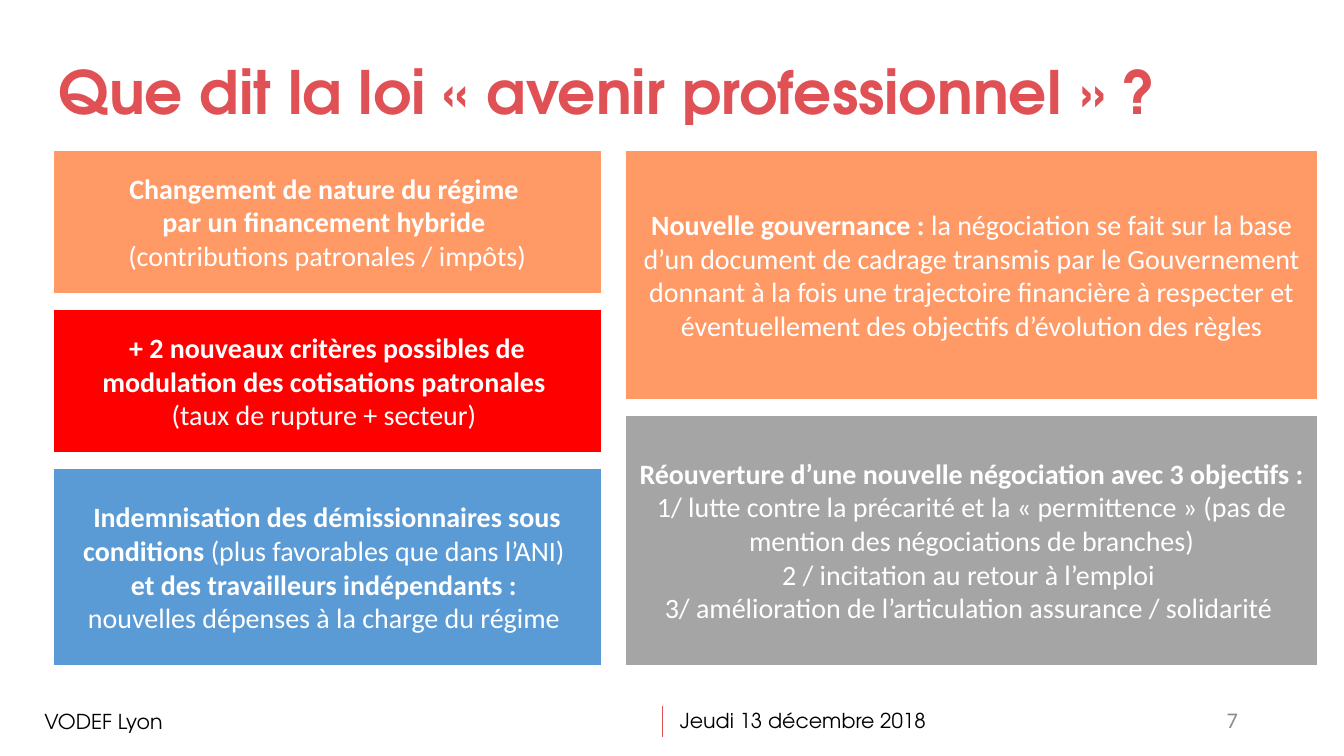
"""Build the slide on the "avenir professionnel" law."""
from dataclasses import dataclass
from typing import Any, NamedTuple

from lxml import etree
from pptx import Presentation
from pptx import util as u
from pptx.dml.color import RGBColor
from pptx.enum import shapes, text
from pptx.oxml.ns import qn


@dataclass(frozen=True)
class Theme:
    accent: str = "DF5155"
    orange: str = "FF9966"
    red: str = "FF0000"
    blue: str = "5B9BD5"
    grey: str = "A5A5A5"
    white: str = "FFFFFF"
    black: str = "000000"
    muted: str = "8C8C8C"
    heading_font: str = "TeX Gyre Adventor"
    body_font: str = "Calibri"
    title_size: int = 32
    card_size: int = 15
    footer_size: int = 11
    number_size: int = 12


class Area(NamedTuple):
    left: float
    top: float
    width: float
    height: float


class Span(NamedTuple):
    text: str
    bold: bool = False


class Style(NamedTuple):
    font: str
    size: int
    color: str
    align: Any = text.PP_ALIGN.LEFT


@dataclass(frozen=True)
class Card:
    height: float
    fill: str
    paras: list[list[Span]]


@dataclass(frozen=True)
class Column:
    left: float
    width: float
    cards: list[Card]


@dataclass(frozen=True)
class Label:
    area: Area
    wording: str
    style: Style
    frame: dict[str, Any]


THEME = Theme()
CARDS_TOP = 2.82
CARD_GAP = 0.27

CARD_STYLE = Style(THEME.body_font, THEME.card_size, THEME.white, text.PP_ALIGN.CENTER)
TITLE_STYLE = Style(THEME.heading_font, THEME.title_size, THEME.accent)
FOOTER_STYLE = Style(THEME.heading_font, THEME.footer_size, THEME.black)
NUMBER_STYLE = Style(THEME.body_font, THEME.number_size, THEME.muted, text.PP_ALIGN.RIGHT)

MIDDLE = {"word_wrap": True, "vertical_anchor": text.MSO_ANCHOR.MIDDLE,
          "auto_size": text.MSO_AUTO_SIZE.NONE}
FOOTER = {"word_wrap": True, "vertical_anchor": text.MSO_ANCHOR.TOP,
          "auto_size": text.MSO_AUTO_SIZE.SHAPE_TO_FIT_TEXT,
          "margin_left": u.Cm(0.1), "margin_right": u.Cm(0.1),
          "margin_top": u.Cm(0.1), "margin_bottom": u.Cm(0.1)}

COLUMNS = [
    Column(0.99, 10.39, [
        Card(2.74, THEME.orange, [
            [Span("Changement de nature du régime ", True)],
            [Span("par un financement hybride ", True)],
            [Span("(contributions patronales / impôts)")],
        ]),
        Card(2.74, THEME.red, [
            [Span("+ 2 nouveaux critères possibles de modulation des cotisations patronales ", True)],
            [Span("(taux de rupture + secteur) ")],
        ]),
        Card(3.76, THEME.blue, [
            [Span("Indemnisation des démissionnaires sous conditions", True),
             Span(" (plus favorables que dans l’ANI) ")],
            [Span("et des travailleurs indépendants : ", True)],
            [Span("nouvelles dépenses à la charge du régime ")],
        ]),
    ]),
    Column(11.81, 13.11, [
        Card(4.75, THEME.orange, [
            [Span("Nouvelle gouvernance : ", True),
             Span("la négociation se fait sur la base d’un document de cadrage transmis par le "
                  "Gouvernement donnant à la fois une trajectoire financière à respecter et "
                  "éventuellement des objectifs d’évolution des règles")],
        ]),
        Card(4.75, THEME.grey, [
            [Span("Réouverture d’une nouvelle négociation avec 3 objectifs : ", True)],
            [Span("1/ lutte contre la précarité et la « permittence » "
                  "(pas de mention des négociations de branches)")],
            [Span("2 / incitation au retour à l’emploi ")],
            [Span("3/ amélioration de l’articulation assurance / solidarité ")],
        ]),
    ]),
]

LABELS = [
    Label(Area(0.74, 13.31, 11.66, 0.66), "VODEF Lyon", FOOTER_STYLE, FOOTER),
    Label(Area(12.65, 13.28, 5.31, 0.66), "Jeudi 13 décembre 2018", FOOTER_STYLE,
          {**FOOTER, "margin_left": u.Cm(0.2)}),
    Label(Area(17.93, 13.23, 5.72, 0.76), "7", NUMBER_STYLE, MIDDLE),
]


def apply(target: Any, values: dict[str, Any]) -> None:
    """Set every named attribute on the target."""
    for name, value in values.items():
        setattr(target, name, value)


def lengths(area: Area) -> list[u.Length]:
    """Convert an area to slide lengths."""
    return [u.Cm(value) for value in area]


def write(box: Any, paras: list[list[Span]], style: Style, frame: dict[str, Any]) -> None:
    """Fill a box with styled paragraphs."""
    apply(box.text_frame, frame)
    for index, spans in enumerate(paras):
        para = box.text_frame.add_paragraph() if index else box.text_frame.paragraphs[0]
        para.alignment = style.align
        for part in spans:
            span = para.add_run()
            span.text = part.text
            apply(span.font, {"name": style.font, "size": u.Pt(style.size), "bold": part.bold})
            span.font.color.rgb = RGBColor.from_string(style.color)


def draw_title(page: Any, area: Area, wording: str) -> None:
    """Place and format the title placeholder."""
    title = page.shapes.title
    apply(title, dict(zip(("left", "top", "width", "height"), lengths(area))))
    write(title, [[Span(wording, True)]], TITLE_STYLE, MIDDLE)
    title.text_frame.paragraphs[0].line_spacing = 0.9


def draw_card(page: Any, area: Area, card: Card) -> None:
    """Draw one coloured card."""
    box = page.shapes.add_shape(shapes.MSO_SHAPE.RECTANGLE, *lengths(area))
    box.shadow.inherit = False
    box.fill.solid()
    box.fill.fore_color.rgb = RGBColor.from_string(card.fill)
    box.line.color.rgb = RGBColor.from_string(THEME.white)
    box.line.width = u.Pt(1.5)
    write(box, card.paras, CARD_STYLE, MIDDLE)


def draw_column(page: Any, column: Column) -> None:
    """Stack the cards of a column with equal gaps."""
    top = CARDS_TOP
    for card in column.cards:
        draw_card(page, Area(column.left, top, column.width, card.height), card)
        top += card.height + CARD_GAP


def draw_label(page: Any, label: Label) -> None:
    """Draw one footer label."""
    box = page.shapes.add_textbox(*lengths(label.area))
    write(box, [[Span(label.wording)]], label.style, label.frame)


def draw_divider(page: Any, left: float, top: float, bottom: float) -> None:
    """Draw the vertical footer divider."""
    divider = page.shapes.add_connector(
        shapes.MSO_CONNECTOR.STRAIGHT, u.Cm(left), u.Cm(top), u.Cm(left), u.Cm(bottom))
    divider.line.color.rgb = RGBColor.from_string(THEME.accent)
    divider.line.width = u.Pt(1)
    etree.SubElement(divider._element.spPr, qn("a:effectLst"))


def main() -> None:
    """Build and save the deck."""
    deck = Presentation()
    apply(deck, {"slide_width": u.Cm(25.4), "slide_height": u.Cm(14.29)})
    page = deck.slides.add_slide(deck.slide_layouts[5])
    draw_title(page, Area(0.86, 1.19, 21.89, 1.22), "Que dit la loi « avenir professionnel » ?")
    for column in COLUMNS:
        draw_column(page, column)
    for label in LABELS:
        draw_label(page, label)
    draw_divider(page, 12.52, 13.34, 13.94)
    deck.save("out.pptx")


if __name__ == "__main__":
    main()
